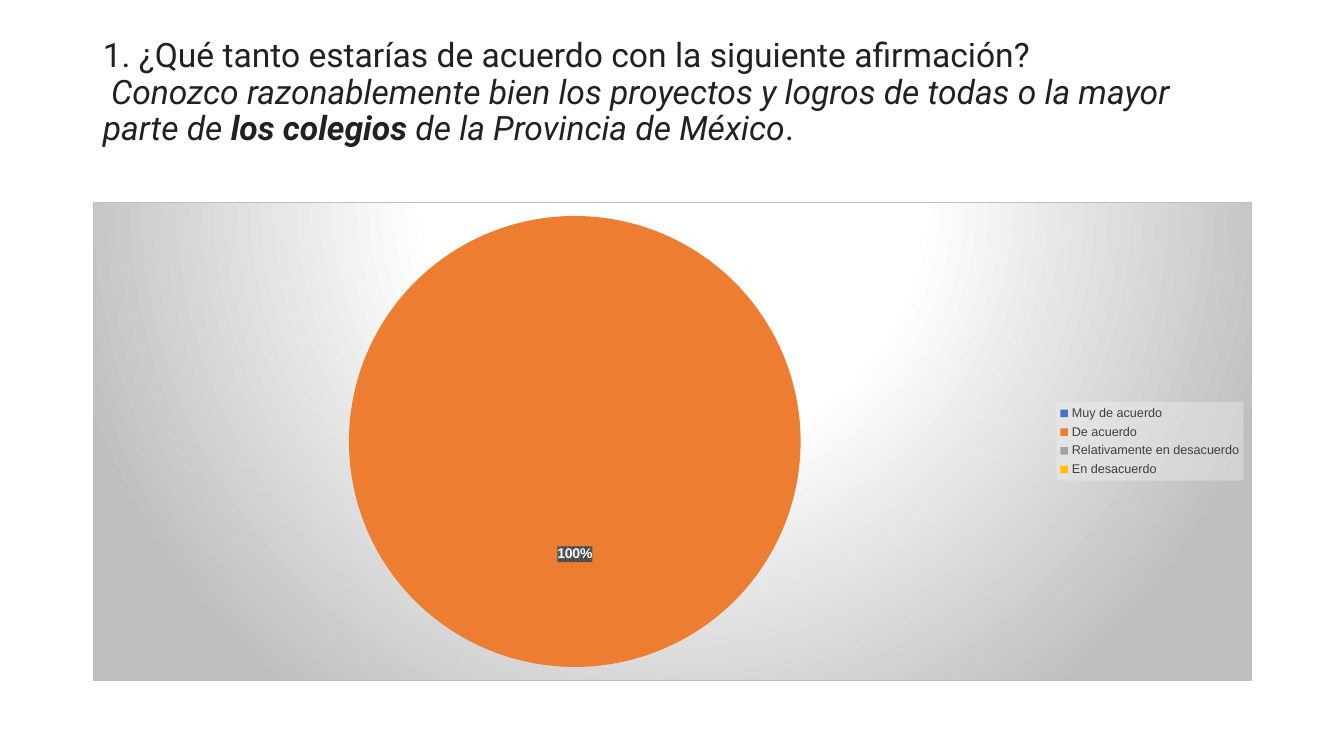
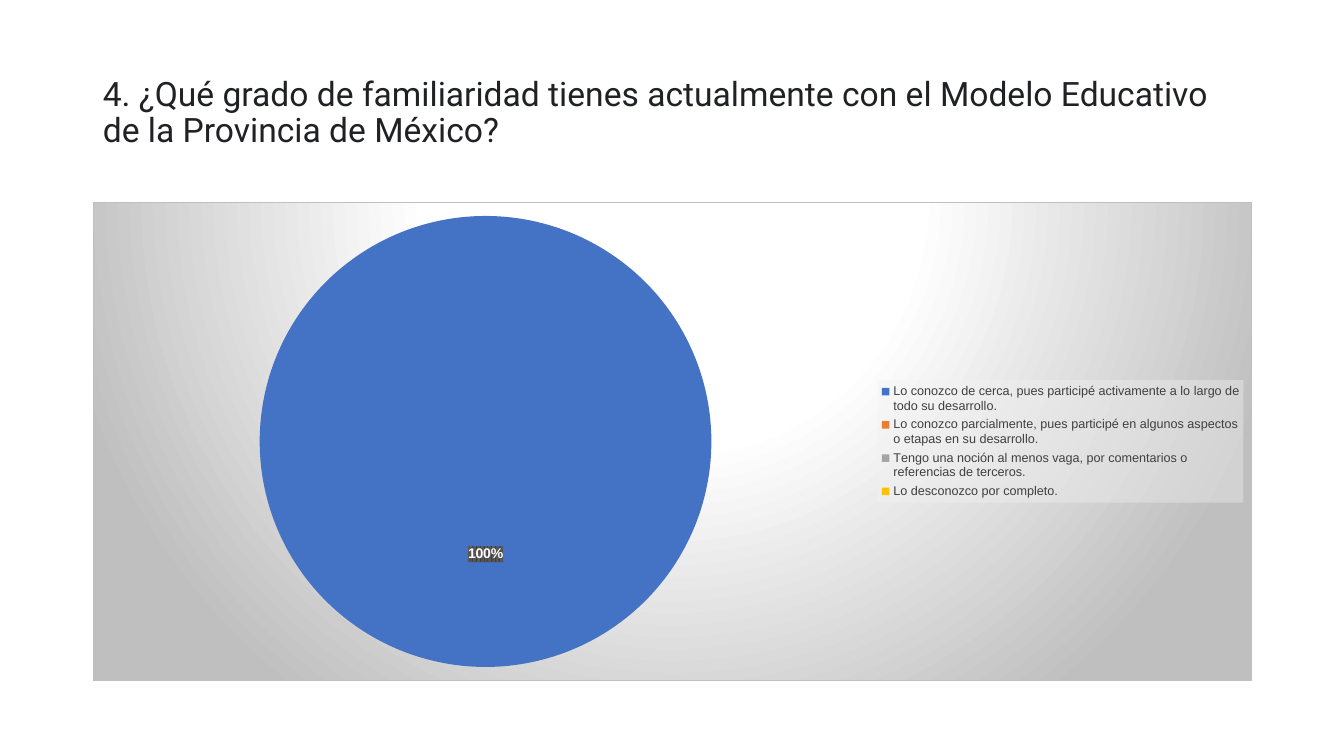
from lxml import etree
from pptx import Presentation
from pptx.chart.data import CategoryChartData
from pptx.dml.color import RGBColor
from pptx.enum.chart import XL_CHART_TYPE, XL_LABEL_POSITION, XL_LEGEND_POSITION
from pptx.enum.text import MSO_ANCHOR, MSO_AUTO_SIZE
from pptx.oxml.ns import qn
from pptx.util import Inches, Pt

PIE = XL_CHART_TYPE.PIE
LEGEND_RIGHT = XL_LEGEND_POSITION.RIGHT
LABEL_CENTER = XL_LABEL_POSITION.CENTER
MIDDLE = MSO_ANCHOR.MIDDLE
NO_AUTOFIT = MSO_AUTO_SIZE.NONE

# Content: each title is a list of lines, each line a list of (text, format)
ITALIC = {"italic": True}
BOLD_ITALIC = {"italic": True, "bold": True}
QUESTIONS = [
    {
        "title": [
            [("1. ¿Qué tanto estarías de acuerdo con la siguiente afirmación?", {})],
            [
                (" Conozco razonablemente bien los proyectos y logros de todas "
                 "o la mayor parte de ", ITALIC),
                ("los colegios ", BOLD_ITALIC),
                ("de la Provincia de México", ITALIC),
                (".", {}),
            ],
            [],
        ],
        "answers": [
            ("Muy de acuerdo", 0),
            ("De acuerdo", 100),
            ("Relativamente en desacuerdo", 0),
            ("En desacuerdo", 0),
        ],
    },
    {
        "title": [
            [("4. ¿Qué grado de familiaridad tienes actualmente con el Modelo "
              "Educativo de la Provincia de México?", {})],
        ],
        "answers": [
            ("Lo conozco de cerca, pues participé activamente a lo largo de "
             "todo su desarrollo.", 100),
            ("Lo conozco parcialmente, pues participé en algunos aspectos o "
             "etapas en su desarrollo.", 0),
            ("Tengo una noción al menos vaga, por comentarios o referencias "
             "de terceros.", 0),
            ("Lo desconozco por completo.", 0),
        ],
    },
]

# Shared style
COLORS = {
    "title": "202124", "text": "000000", "legend": "404040", "label": "FFFFFF",
    "center": "FFFFFF", "edge": "BFBFBF", "legend_back": "F2F2F2",
    "label_dots": "404040", "label_back": "595959",
}
SLICES = ["4472C4", "ED7D31", "A5A5A5", "FFC000"]
TITLE_BOX = [Inches(v) for v in (0.92, 0.4, 11.5, 1.45)]
CHART_BOX = [Inches(v) for v in (0.92, 2, 11.5, 4.76)]
CHART_FONT = {"name": "Arial", "size": Pt(10)}
LEGEND_FONT = {"name": "Arial", "size": Pt(9)}
LABEL_FONT = {"name": "Arial", "size": Pt(10), "bold": True}

NAMESPACES = ('xmlns:c="http://schemas.openxmlformats.org/drawingml/2006/chart" '
              'xmlns:a="http://schemas.openxmlformats.org/drawingml/2006/main"')


def color_xml(name, inner=""):
    return f'<a:srgbClr val="{COLORS[name]}">{inner}</a:srgbClr>'


BACKGROUND_XML = (
    '<a:gradFill flip="none" rotWithShape="1"><a:gsLst>'
    f'<a:gs pos="0">{color_xml("center")}</a:gs>'
    f'<a:gs pos="39000">{color_xml("center")}</a:gs>'
    f'<a:gs pos="100000">{color_xml("edge")}</a:gs></a:gsLst>'
    '<a:path path="circle"><a:fillToRect l="50000" t="-80000" r="50000" b="180000"/>'
    '</a:path></a:gradFill>'
    f'<a:ln w="9525"><a:solidFill>{color_xml("edge")}</a:solidFill></a:ln>')
LEGEND_XML = ('<a:solidFill>' + color_xml("legend_back", '<a:alpha val="39000"/>')
              + '</a:solidFill>')
LABEL_XML = (f'<a:pattFill prst="pct75"><a:fgClr>{color_xml("label_dots")}</a:fgClr>'
             f'<a:bgClr>{color_xml("label_back")}</a:bgClr></a:pattFill>')


def set_font(font, values, color=None):
    for name, value in values.items():
        setattr(font, name, value)
    if color:
        font.color.rgb = RGBColor.from_string(COLORS[color])


def set_background(part, fill_xml):
    """Put shape properties just before the text properties of a chart part."""
    properties = etree.fromstring(f"<c:spPr {NAMESPACES}>{fill_xml}</c:spPr>")
    part.find(qn("c:txPr")).addprevious(properties)


def style_master_title(prs):
    level = prs.slide_master.element.find(
        f"{qn('p:txStyles')}/{qn('p:titleStyle')}/{qn('a:lvl1pPr')}")
    level.set("algn", "l")
    run_style = level.find(qn("a:defRPr"))
    run_style.set("sz", "2400")
    for child in list(run_style):
        run_style.remove(child)
    fill = etree.SubElement(run_style, qn("a:solidFill"))
    etree.SubElement(fill, qn("a:srgbClr"), val=COLORS["title"])
    etree.SubElement(run_style, qn("a:latin"), typeface="Roboto")


def add_title(slide, lines):
    title = slide.shapes.title
    title.left, title.top, title.width, title.height = TITLE_BOX
    frame = title.text_frame
    frame.vertical_anchor = MIDDLE
    frame.auto_size = NO_AUTOFIT
    paragraph = frame.paragraphs[0]
    paragraph.line_spacing = 0.9
    for index, line in enumerate(lines):
        if index:
            paragraph.add_line_break()
        for text, values in line:
            run = paragraph.add_run()
            run.text = text
            set_font(run.font, values)


def add_pie(slide, answers):
    data = CategoryChartData()
    data.categories = [answer for answer, _ in answers]
    data.add_series("Series 1", [share for _, share in answers])
    chart = slide.shapes.add_chart(PIE, *CHART_BOX, data).chart
    chart.has_title = False
    set_font(chart.font, CHART_FONT, "text")
    set_background(chart.element, BACKGROUND_XML)

    # Legend
    chart.has_legend = True
    legend = chart.legend
    legend.position = LEGEND_RIGHT
    legend.include_in_layout = False
    set_font(legend.font, LEGEND_FONT, "legend")
    set_background(next(chart.element.iter(qn("c:legend"))), LEGEND_XML)

    # Slices
    chart.plots[0].vary_by_categories = True
    series = chart.plots[0].series[0]
    for index, color in enumerate(SLICES):
        fill = series.points[index].format.fill
        fill.solid()
        fill.fore_color.rgb = RGBColor.from_string(color)

    # Percent labels, removed from the empty slices
    labels = series.data_labels
    labels.show_percentage = True
    labels.show_value = False
    labels.number_format = "0%"
    labels.number_format_is_linked = False
    labels.position = LABEL_CENTER
    set_font(labels.font, LABEL_FONT, "label")
    label_list = next(chart.element.iter(qn("c:dLbls")))
    set_background(label_list, LABEL_XML)
    empty = [index for index, (_, share) in enumerate(answers) if not share]
    for place, index in enumerate(empty):
        label_list.insert(place, etree.fromstring(
            f'<c:dLbl {NAMESPACES}><c:idx val="{index}"/><c:delete val="1"/></c:dLbl>'))


def main():
    prs = Presentation()
    prs.slide_width, prs.slide_height = Inches(13.33), Inches(7.5)
    style_master_title(prs)
    title_only = prs.slide_layouts.get_by_name("Title Only")
    for question in QUESTIONS:
        slide = prs.slides.add_slide(title_only)
        add_title(slide, question["title"])
        add_pie(slide, question["answers"])
    prs.save("out.pptx")


if __name__ == "__main__":
    main()
